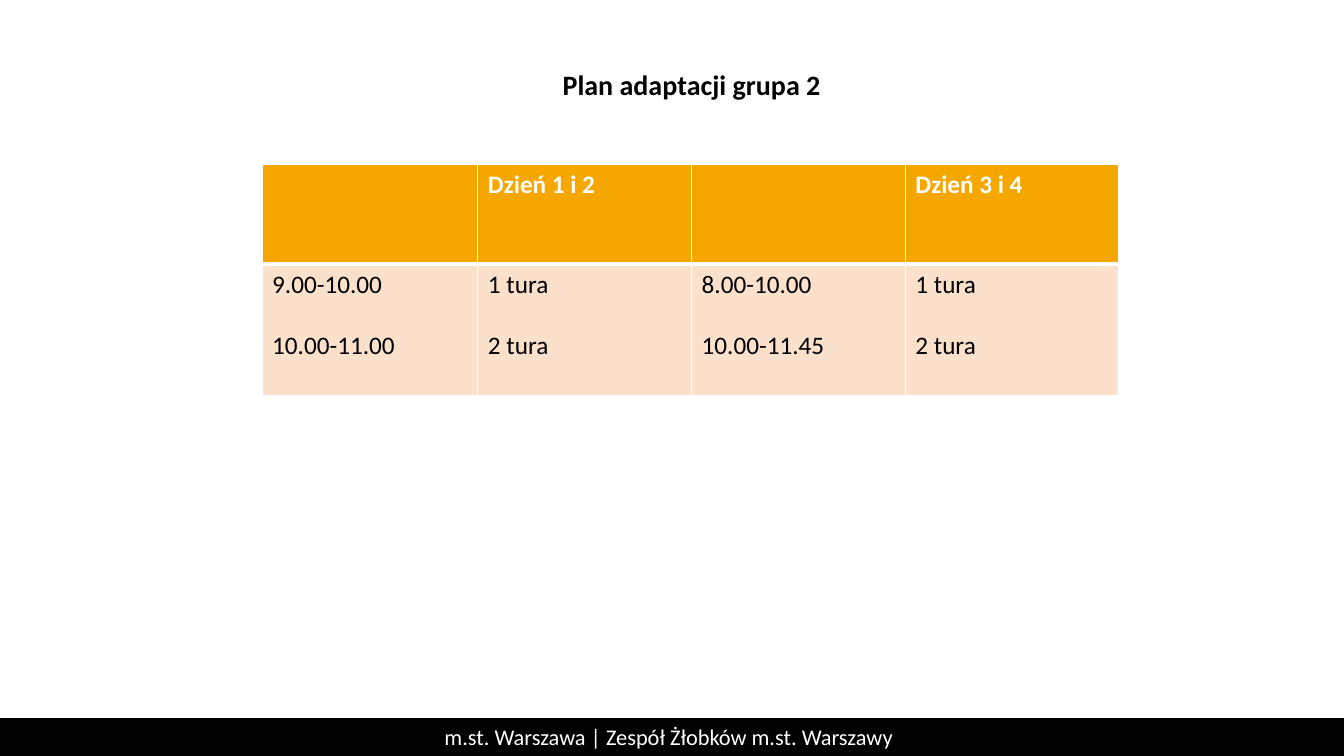
from lxml.etree import SubElement
from pptx import Presentation
from pptx.dml.color import RGBColor
from pptx.enum.shapes import MSO_SHAPE as Preset
from pptx.enum.text import MSO_ANCHOR as Anchor, MSO_AUTO_SIZE as AutoSize, PP_ALIGN as Align
from pptx.oxml.ns import qn
from pptx.util import Inches, Pt

BLACK, WHITE, ORANGE, PEACH = "000000", "FFFFFF", "F5A700", "FBE1CC"


def write(paragraph, text, size, color, bold=False):
    run = paragraph.add_run()
    run.text = text
    font_format = {"name": "Calibri", "size": Pt(size), "bold": bold}
    for name, value in font_format.items():
        setattr(run.font, name, value)
    run.font.color.rgb = RGBColor.from_string(color)


def add_borders(cell, widths):
    """Draw white borders; widths maps the sides L, R, T, B to points."""
    properties = cell._tc.get_or_add_tcPr()
    for side, width in widths.items():
        line = SubElement(properties, qn(f"a:ln{side}"), w=str(Pt(width)))
        fill = SubElement(line, qn("a:solidFill"))
        SubElement(fill, qn("a:srgbClr"), val=WHITE)


presentation = Presentation()
presentation.slide_width = Inches(13.33)
presentation.slide_height = Inches(7.5)
slide = presentation.slides.add_slide(presentation.slide_layouts[5])

# Footer
bar = slide.shapes.add_shape(Preset.RECTANGLE, 0, Inches(7.13), Inches(13.33), Inches(0.37))
bar.shadow.inherit = False
bar.fill.solid()
bar.fill.fore_color.rgb = RGBColor.from_string(BLACK)
bar.line.color.rgb = RGBColor.from_string(BLACK)
bar.line.width = Pt(1)

footer = slide.shapes.add_textbox(Inches(4.31), Inches(7.13), Inches(4.71), Inches(0.37))
footer.text_frame.word_wrap = False
write(footer.text_frame.paragraphs[0], "m.st. Warszawa | Zespół Żłobków m.st. Warszawy", 16, WHITE)

# Title
title = slide.shapes.title
title_place = {"left": 1.63, "top": 0.29, "width": 10.46, "height": 0.68}
for name, value in title_place.items():
    setattr(title, name, Inches(value))
title.text_frame.auto_size = AutoSize.NONE
title.text_frame.vertical_anchor = Anchor.TOP
heading = title.text_frame.paragraphs[0]
heading.alignment = Align.CENTER
heading.line_spacing = 2.0
write(heading, "Plan adaptacji grupa 2", 20, BLACK, bold=True)

# Schedule: one list of lines per cell
schedule = [
    [[], ["Dzień 1 i 2"], [], ["Dzień 3 i 4"]],
    [["9.00-10.00", "10.00-11.00"], ["1 tura", "2 tura"],
     ["8.00-10.00", "10.00-11.45"], ["1 tura", "2 tura"]],
]
row_styles = [
    {"height": 0.99, "fill": ORANGE, "color": WHITE, "bold": True,
     "borders": {"L": 1, "R": 1, "T": 1, "B": 3}},
    {"height": 1.3, "fill": PEACH, "color": BLACK, "bold": False,
     "borders": {"L": 1, "R": 1, "T": 3, "B": 1}},
]
table = slide.shapes.add_table(2, 4, Inches(2.6), Inches(1.63), Inches(8.5), Inches(2.29)).table
for column, width in zip(table.columns, [2.14, 2.12, 2.12, 2.12]):
    column.width = Inches(width)

for row, contents, style in zip(table.rows, schedule, row_styles):
    row.height = Inches(style["height"])
    for cell, lines in zip(row.cells, contents):
        add_borders(cell, style["borders"])
        cell.fill.solid()
        cell.fill.fore_color.rgb = RGBColor.from_string(style["fill"])
        for index, text in enumerate(lines):
            frame = cell.text_frame
            paragraph = frame.add_paragraph() if index else frame.paragraphs[0]
            paragraph.space_before = Pt(22 if index else 0)
            write(paragraph, text, 18, style["color"], style["bold"])

presentation.save("out.pptx")
